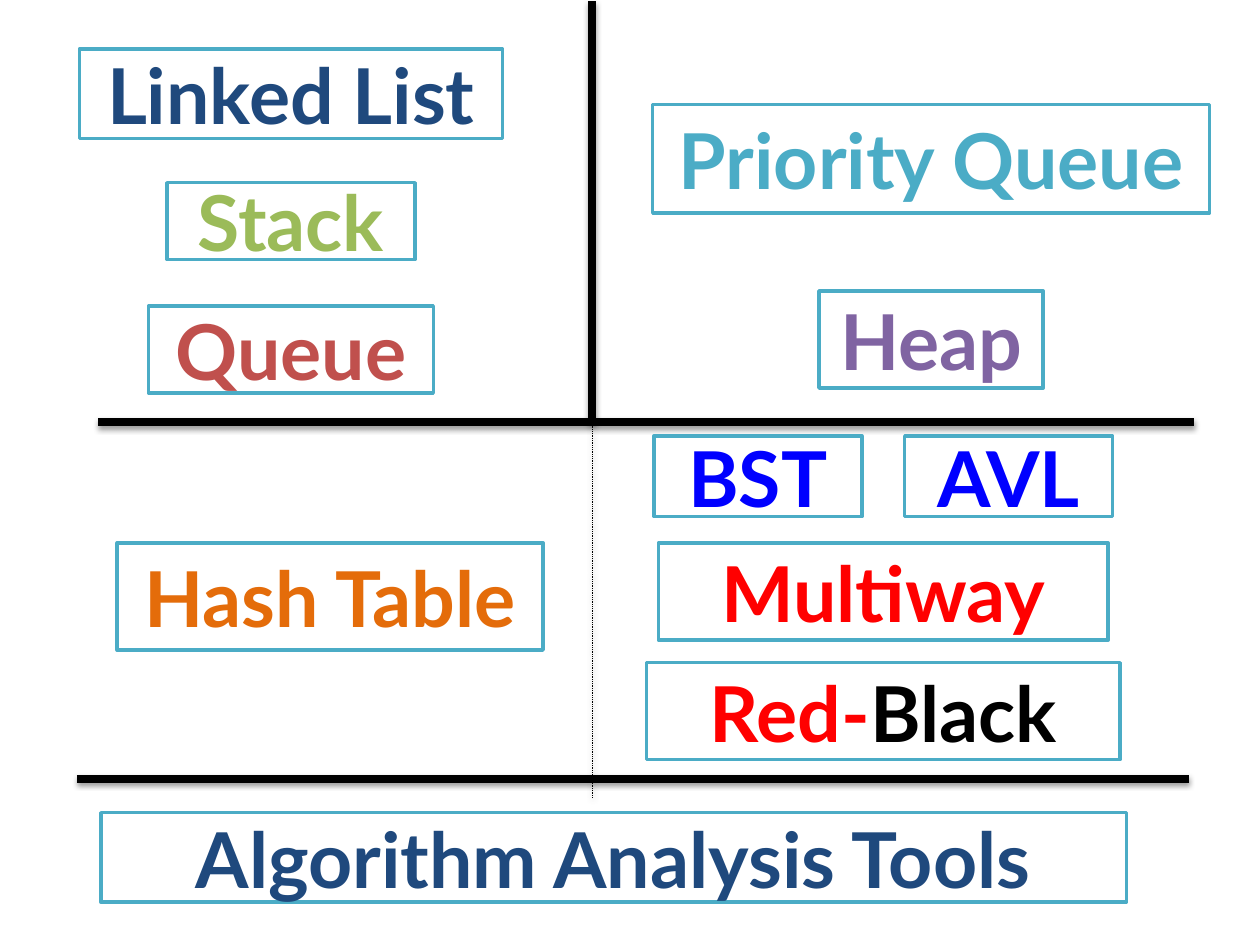
from lxml import etree
from pptx import Presentation
from pptx.dml.color import RGBColor
from pptx.enum import dml, shapes, text
from pptx.oxml import ns
from pptx.util import Inches, Pt

FONT = "Lato"
NAVY, TEAL, BLUE, RED, BLACK = "1F497D", "4BACC6", "0000FF", "FF0000", "000000"


def rgb(value):
    """Turn a hex string into a colour."""
    return RGBColor.from_string(value)


def add_label(parent, x, y, w, h, *parts):
    """Add an outlined box holding (wording, colour) parts on one line."""
    sp = parent.add_shape(shapes.MSO_SHAPE.RECTANGLE, Inches(x), Inches(y), Inches(w), Inches(h))
    sp.shadow.inherit = False
    sp.fill.solid()
    sp.fill.fore_color.rgb = rgb("FFFFFF")
    sp.line.color.rgb = rgb(TEAL)
    sp.line.width = Pt(2)
    tf = sp.text_frame
    tf.word_wrap = True
    tf.vertical_anchor = text.MSO_ANCHOR.MIDDLE
    p = tf.paragraphs[0]
    p.alignment = text.PP_ALIGN.CENTER
    for wording, color in parts:
        r = p.add_run()
        r.text = wording
        r.font.name, r.font.size, r.font.bold = FONT, Pt(44), True
        r.font.color.rgb = rgb(color)


def add_centered(s, box, rows):
    """Stack (offset, width, height, parts) rows on the middle axis of a box."""
    left, top, width, _ = box
    for dy, w, h, parts in rows:
        add_label(s.shapes, left + (width - w) / 2, top + dy, w, h, *parts)


def add_linear(s, box):
    """Place the linear structures."""
    add_centered(s, box, [
        (0, 3.36, 0.71, [("Linked List", NAVY)]),
        (1.06, 1.97, 0.61, [("Stack", "9BBB59")]),
        (2.04, 2.26, 0.69, [("Queue", "C0504D")]),
    ])


def add_priority(s, box):
    """Place the priority queue above its heap."""
    add_centered(s, box, [
        (0, 4.42, 0.86, [("Priority Queue", TEAL)]),
        (1.48, 1.78, 0.77, [("Heap", "8064A2")]),
    ])


def add_hash(s, box):
    """Place the hash table label."""
    add_label(s.shapes, *box, ("Hash Table", "E46C0A"))


def add_trees(s, box):
    """Place the grouped pair of binary trees above the other search trees."""
    left, top, width, _ = box
    w, gap = 1.65, 0.34
    x = left + (width - 2 * w - gap) / 2
    pair = s.shapes.add_group_shape()
    for i, name in enumerate(("BST", "AVL")):
        add_label(pair.shapes, x + i * (w + gap), top, w, 0.64, (name, BLUE))
    add_centered(s, box, [
        (0.85, 3.57, 0.77, [("Multiway", RED)]),
        (1.8, 3.76, 0.77, [("Red-", RED), ("Black", BLACK)]),
    ])


def add_tools(s, box):
    """Place the banner under the quadrants."""
    add_label(s.shapes, *box, ("Algorithm Analysis Tools", NAVY))


def add_divider(s, x1, y1, x2, y2, width=4.5, dash=None):
    """Draw a black line with a soft shadow below it."""
    c = s.shapes.add_connector(shapes.MSO_CONNECTOR.STRAIGHT,
                               Inches(x1), Inches(y1), Inches(x2), Inches(y2))
    c.line.color.rgb = rgb(BLACK)
    c.line.width = Pt(width)
    if dash:
        c.line.dash_style = dash
    effects = etree.SubElement(c._element.spPr, ns.qn("a:effectLst"))
    shadow = etree.SubElement(effects, ns.qn("a:outerShdw"), blurRad=str(Pt(3.1)),
                              dist=str(Pt(1.6)), dir="5400000", rotWithShape="0")
    color = etree.SubElement(shadow, ns.qn("a:srgbClr"), val=BLACK)
    etree.SubElement(color, ns.qn("a:alpha"), val="38000")


def add_dividers(s, box):
    """Split a box into quadrants around its centre lines."""
    left, top, width, height = box
    x, middle, bottom = left + 4.09, top + 3.34, top + height
    add_divider(s, x, top, x, middle)
    add_divider(s, left + 0.17, middle, left + width, middle)
    add_divider(s, x, middle, x, bottom, 0.5, dml.MSO_LINE.ROUND_DOT)
    add_divider(s, left, bottom - 0.15, left + width - 0.04, bottom - 0.15)


def main():
    """Build the slide and save it."""
    prs = Presentation()
    prs.slide_width, prs.slide_height = Inches(10), Inches(7.5)
    s = prs.slides.add_slide(prs.slide_layouts[6])
    add_dividers(s, (0.61, 0.01, 8.87, 6.32))
    add_linear(s, (0.62, 0.39, 3.38, 2.73))
    add_priority(s, (5.17, 0.83, 4.44, 2.25))
    add_hash(s, (0.93, 4.31, 3.38, 0.85))
    add_trees(s, (5.13, 3.46, 3.76, 2.57))
    add_tools(s, (0.8, 6.45, 8.14, 0.71))
    prs.save("out.pptx")


if __name__ == "__main__":
    main()
